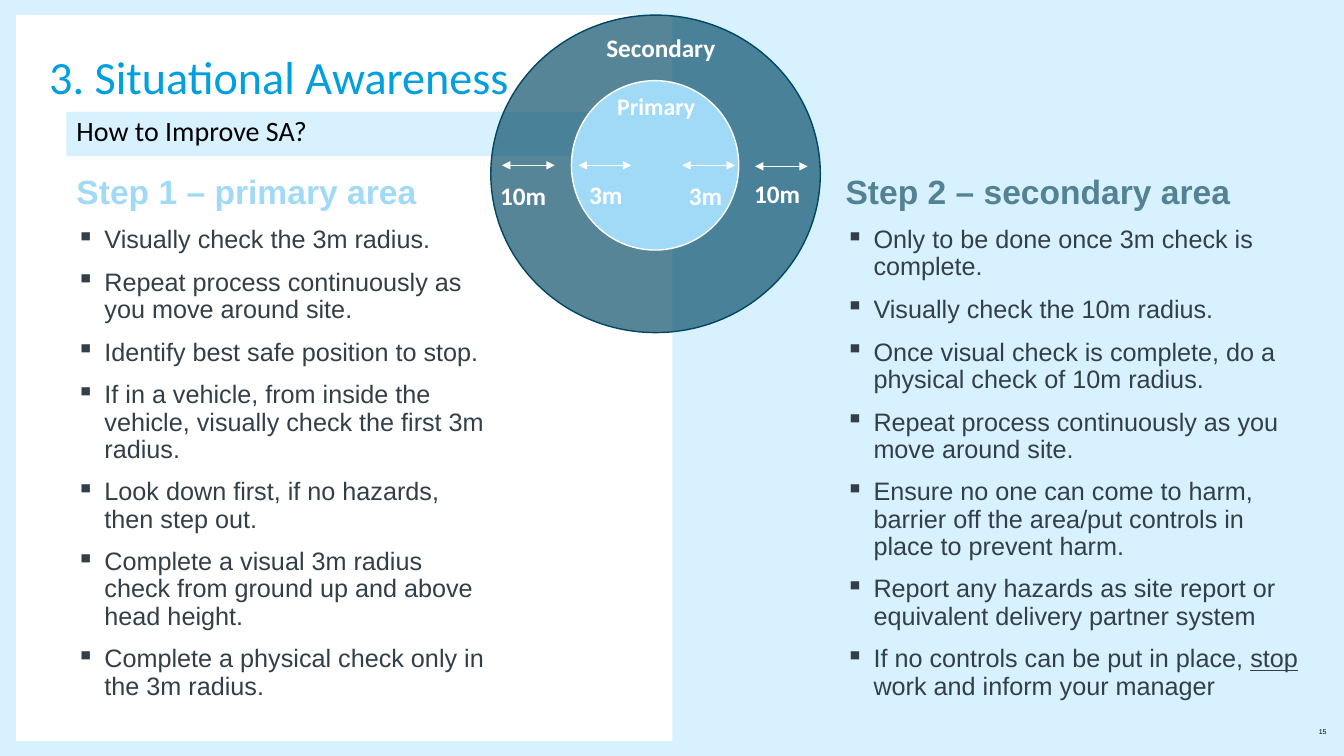
from lxml import etree
from pptx import Presentation
from pptx import util as u
from pptx.dml import color
from pptx.enum import shapes, text
from pptx.oxml import ns

THEME = {
    "sky": "D8F1FF", "white": "FFFFFF", "black": "000000", "title": "009FDF",
    "primary": "A0DAF7", "secondary": "538295", "navy": "004764", "body": "333F48",
    "title_size": 33, "subtitle_size": 20, "step_size": 24, "body_size": 18,
    "primary_size": 17, "number_size": 5, "heading_font": "Calibri", "body_font": "Arial",
}


def rgb(name):
    return color.RGBColor.from_string(THEME[name])


def write(frame, paragraphs, anchor=text.MSO_ANCHOR.TOP):
    """Each paragraph is (runs, font values, paragraph values, bulleted)."""
    frame.word_wrap = True
    frame.vertical_anchor = anchor
    for index, (runs, font_values, layout, bulleted) in enumerate(paragraphs):
        paragraph = frame.add_paragraph() if index else frame.paragraphs[0]
        if bulleted:
            properties = paragraph._p.get_or_add_pPr()
            properties.set("marL", str(u.Pt(20)))
            properties.set("indent", str(-u.Pt(20)))
            etree.SubElement(properties, ns.qn("a:buChar")).set("char", "▪")
        for name, value in layout.items():
            setattr(paragraph, name, value)
        for words, underlined in runs:
            run = paragraph.add_run()
            run.text = words
            for name, value in font_values.items():
                if name == "color":
                    run.font.color.rgb = rgb(value)
                else:
                    setattr(run.font, name, value)
            if underlined:
                run.font.underline = True


deck = Presentation()
deck.slide_width, deck.slide_height = u.Pt(960), u.Pt(540)
slide = deck.slides.add_slide(deck.slide_layouts[6])
slide.background.fill.solid()
slide.background.fill.fore_color.rgb = rgb("sky")

# White panel and subtitle band
bands = []
for fill, box in (("white", (11.5, 10.8, 468.7, 518.4)), ("sky", (47.5, 79.9, 384.5, 31.7))):
    band = slide.shapes.add_shape(shapes.MSO_SHAPE.RECTANGLE, *map(u.Pt, box))
    band.shadow.inherit = False
    band.fill.solid()
    band.fill.fore_color.rgb = rgb(fill)
    band.line.fill.background()
    bands.append(band)
subtitle_font = {"name": THEME["heading_font"], "size": u.Pt(THEME["subtitle_size"]), "color": "black"}
tight = {"line_spacing": 0.9, "alignment": text.PP_ALIGN.LEFT}
write(bands[1].text_frame, [([("How to Improve SA?", False)], subtitle_font, tight, False)])

# Title and page number
title = slide.shapes.add_textbox(*map(u.Pt, (28.1, 35.3, 384.5, 44.6)))
title_font = {"name": THEME["heading_font"], "size": u.Pt(THEME["title_size"]), "color": "title"}
write(title.text_frame, [([("3. Situational Awareness", False)], title_font, tight, False)])

page_number = slide.shapes.add_textbox(*map(u.Pt, (920.9, 516.2, 33.8, 13)))
number_font = {"name": THEME["body_font"], "size": u.Pt(THEME["number_size"]), "color": "black"}
flush_right = {"line_spacing": 0.9, "alignment": text.PP_ALIGN.RIGHT}
write(page_number.text_frame, [([("15", False)], number_font, flush_right, False)],
      text.MSO_ANCHOR.MIDDLE)

# Step columns
steps = [
    ("Step 1 – primary area", "primary", 47.5, 313.2, [
        "Visually check the 3m radius.",
        "Repeat process continuously as you move around site.",
        "Identify best safe position to stop.",
        "If in a vehicle, from inside the vehicle, visually check the first 3m radius.",
        "Look down first, if no hazards, then step out.",
        "Complete a visual 3m radius check from ground up and above head height.",
        "Complete a physical check only in the 3m radius.",
    ]),
    ("Step 2 – secondary area", "secondary", 596.9, 345.6, [
        "Only to be done once 3m check is complete.",
        "Visually check the 10m radius.",
        "Once visual check is complete, do a physical check of 10m radius.",
        "Repeat process continuously as you move around site.",
        "Ensure no one can come to harm, barrier off the area/put controls in place to prevent harm.",
        "Report any hazards as site report or equivalent delivery partner system",
        [("If no controls can be put in place, ", False), ("stop", True),
         (" work and inform your manager", False)],
    ]),
]
check_font = {"name": THEME["body_font"], "size": u.Pt(THEME["body_size"]), "color": "body"}
check_layout = {**tight, "space_before": u.Pt(11)}
for heading, hue, left, width, checks in steps:
    column = slide.shapes.add_textbox(*map(u.Pt, (left, 121.7, width, 407.5)))
    step_font = {"name": THEME["body_font"], "size": u.Pt(THEME["step_size"]),
                 "color": hue, "bold": True}
    lines = [([(heading, False)], step_font, tight, False)]
    for check in checks:
        runs = [(check, False)] if isinstance(check, str) else check
        lines.append((runs, check_font, check_layout, True))
    write(column.text_frame, lines)

# Radius diagram: circles
diagram = slide.shapes.add_group_shape().shapes
for fill, opacity, outline, box in (
    ("navy", 66, "navy", (350.6, 10.8, 235.4, 226.8)),
    ("primary", 100, "white", (408.2, 57.6, 119.5, 121)),
):
    zone = diagram.add_shape(shapes.MSO_SHAPE.FLOWCHART_CONNECTOR, *map(u.Pt, box))
    zone.shadow.inherit = False
    zone.fill.solid()
    zone.fill.fore_color.rgb = rgb(fill)
    if opacity < 100:
        fill_color = zone._element.spPr.find(".//" + ns.qn("a:srgbClr"))
        etree.SubElement(fill_color, ns.qn("a:alpha")).set("val", str(opacity * 1000))
    zone.line.color.rgb = rgb(outline)
    zone.line.width = u.Pt(1)

# Radius diagram: double-headed arrows
for left, y in ((358.6, 118.1), (413.3, 118.1), (487.4, 118.1), (539.3, 118.8)):
    radius = diagram.add_connector(shapes.MSO_CONNECTOR.STRAIGHT,
                                   *map(u.Pt, (left, y, left + 37.6, y)))
    radius.line.color.rgb = rgb("white")
    radius.line.width = u.Pt(0.5)
    for end in ("a:headEnd", "a:tailEnd"):
        etree.SubElement(radius.line._get_or_add_ln(), ns.qn(end)).set("type", "triangle")
    etree.SubElement(radius._element.spPr, ns.qn("a:effectLst"))

# Radius diagram: labels
centred = {"alignment": text.PP_ALIGN.CENTER}
for words, size, box in (
    ("Secondary", "body_size", (405.4, 19.4, 133.2, 28.8)),
    ("Primary", "primary_size", (432, 61.9, 73.4, 28.1)),
    ("10m", "body_size", (337, 125.3, 73.4, 22.3)),
    ("3m", "body_size", (396, 124.6, 73.4, 22.3)),
    ("3m", "body_size", (467.3, 125.3, 73.4, 22.3)),
    ("10m", "body_size", (518.4, 123.8, 73.4, 22.3)),
):
    label = diagram.add_textbox(*map(u.Pt, box))
    label_font = {"name": THEME["heading_font"], "size": u.Pt(THEME[size]),
                  "color": "white", "bold": True}
    write(label.text_frame, [([(words, False)], label_font, centred, False)])

deck.save("out.pptx")
